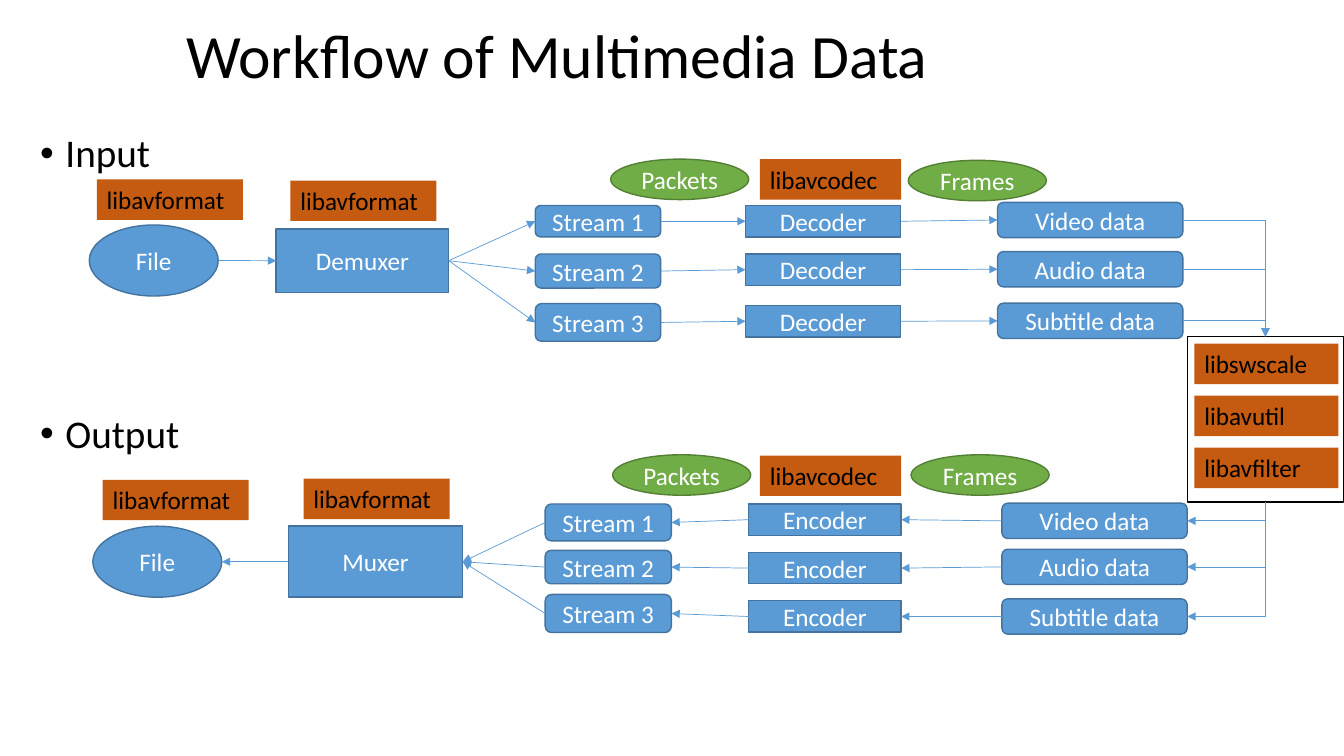
from lxml.etree import SubElement
from pptx import Presentation
from pptx.dml.color import RGBColor
from pptx.enum.shapes import MSO_CONNECTOR, MSO_SHAPE
from pptx.enum.text import MSO_ANCHOR, MSO_AUTO_SIZE, PP_ALIGN
from pptx.oxml.ns import qn
from pptx.util import Cm, Pt

BLUE, BLUE_EDGE = "5B9BD5", "43739E"
GREEN, GREEN_EDGE = "70AD47", "538035"
ORANGE, BLACK, WHITE = "C55A11", "000000", "FFFFFF"
TOP, LEFT, BOTTOM, RIGHT = range(4)
STREAMS = ["Stream 1", "Stream 2", "Stream 3"]
DATA = ["Video data", "Audio data", "Subtitle data"]


def colour(hex_code):
    return RGBColor.from_string(hex_code)


def style(paragraph, size, hex_code, align):
    paragraph.font.name = "Calibri"
    paragraph.font.size = Pt(size)
    paragraph.font.color.rgb = colour(hex_code)
    paragraph.alignment = align


def place(shape, left, top, width, height):
    shape.left, shape.top = Cm(left), Cm(top)
    shape.width, shape.height = Cm(width), Cm(height)


def write_title(slide, text):
    title = slide.shapes.title
    place(title, 1.9, 0.25, 29.21, 2.44)
    frame = title.text_frame
    frame.text = text
    frame.margin_left = Cm(2.79)
    frame.vertical_anchor = MSO_ANCHOR.MIDDLE
    frame.auto_size = MSO_AUTO_SIZE.NONE
    style(frame.paragraphs[0], 44, BLACK, PP_ALIGN.LEFT)
    frame.paragraphs[0].line_spacing = 0.9


def write_sections(slide, sections):
    body = slide.placeholders[1]
    place(body, 0.76, 3.25, 33.1, 15.19)
    frame = body.text_frame
    frame.text = "\n".join(text for text, gap in sections)
    frame.auto_size = MSO_AUTO_SIZE.NONE
    for paragraph, (text, gap) in zip(frame.paragraphs, sections):
        style(paragraph, 28, BLACK, PP_ALIGN.LEFT)
        paragraph.line_spacing = 0.9
        paragraph.space_before = Pt(gap)
        properties = paragraph._p.get_or_add_pPr()
        properties.set("marL", str(Cm(0.635)))
        properties.set("indent", str(-Cm(0.635)))
        SubElement(properties, qn("a:buChar"), char="•")


def add_block(slide, kind, box, text="", fill=BLUE, edge=BLUE_EDGE):
    block = slide.shapes.add_shape(kind, *map(Cm, box))
    block.shadow.inherit = False
    if fill:
        block.fill.solid()
        block.fill.fore_color.rgb = colour(fill)
    else:
        block.fill.background()
    if edge:
        block.line.color.rgb = colour(edge)
        block.line.width = Pt(1)
    else:
        block.line.fill.background()
    if text:
        block.text_frame.text = text
        block.text_frame.vertical_anchor = MSO_ANCHOR.MIDDLE
        style(block.text_frame.paragraphs[0], 18, WHITE, PP_ALIGN.CENTER)
    return block


def add_library(slide, text, left, top, width):
    label = add_block(slide, MSO_SHAPE.RECTANGLE, (left, top, width, 1.02),
                      text, ORANGE, None)
    label.text_frame.vertical_anchor = MSO_ANCHOR.TOP
    style(label.text_frame.paragraphs[0], 18, BLACK, PP_ALIGN.LEFT)


def add_stack(slide, kind, texts, left, width, tops, heights):
    return [add_block(slide, kind, (left, top, width, height), text)
            for text, top, height in zip(texts, tops, heights)]


def side(shape, site):
    across = {LEFT: 0, RIGHT: shape.width}.get(site, shape.width // 2)
    down = {TOP: 0, BOTTOM: shape.height}.get(site, shape.height // 2)
    return shape.left + across, shape.top + down


def add_line(slide, kind, source, source_site, target, target_site, head="tailEnd"):
    line = slide.shapes.add_connector(
        kind, *side(source, source_site), *side(target, target_site))
    line.line.color.rgb = colour(BLUE)
    line.line.width = Pt(0.5)
    SubElement(line.line._get_or_add_ln(), qn("a:" + head), type="triangle")
    SubElement(line._element.spPr, qn("a:effectLst"))
    return line


def add_arrow(slide, source, source_site, target, target_site):
    arrow = add_line(slide, MSO_CONNECTOR.STRAIGHT,
                     source, source_site, target, target_site)
    if source.auto_shape_type != MSO_SHAPE.OVAL:
        arrow.begin_connect(source, source_site)
    if target.auto_shape_type != MSO_SHAPE.OVAL:
        arrow.end_connect(target, target_site)


def add_elbow(slide, data, filters, filters_site, head):
    elbow = add_line(slide, MSO_CONNECTOR.ELBOW,
                     data, RIGHT, filters, filters_site, head)
    elbow._element.spPr.find(qn("a:prstGeom")).set("prst", "bentConnector2")


def link(slide, sources, targets, forward):
    for source, target in zip(sources, targets):
        if forward:
            add_arrow(slide, source, RIGHT, target, LEFT)
        else:
            add_arrow(slide, target, LEFT, source, RIGHT)


def add_flow(slide, file_box, container, container_box, streams, coder, coders, data, forward):
    file = add_block(slide, MSO_SHAPE.OVAL, file_box, "File")
    muxer = add_block(slide, MSO_SHAPE.RECTANGLE, container_box, container)
    stream_boxes = add_stack(slide, MSO_SHAPE.ROUNDED_RECTANGLE, STREAMS, *streams)
    coder_boxes = add_stack(slide, MSO_SHAPE.RECTANGLE, [coder] * 3, *coders, [0.79] * 3)
    data_boxes = add_stack(slide, MSO_SHAPE.ROUNDED_RECTANGLE, DATA, *data, [0.89] * 3)
    stages = [[muxer] * 3, stream_boxes, coder_boxes, data_boxes]
    link(slide, [file], [muxer], forward)
    for sources, targets in zip(stages, stages[1:]):
        link(slide, sources, targets, forward)
    return data_boxes


def main():
    presentation = Presentation()
    presentation.slide_width, presentation.slide_height = Cm(33.87), Cm(19.05)
    slide = presentation.slides.add_slide(presentation.slide_layouts[1])
    write_title(slide, "Workflow of Multimedia Data")
    write_sections(slide, [("Input", 10), ("Output", 170)])

    decoded = add_flow(
        slide, (2.25, 5.67, 3.25, 1.79), "Demuxer", (6.96, 5.77, 4.35, 1.6),
        (13.49, 3.16, (5.18, 6.4, 7.65), (0.79, 0.86, 0.95)),
        "Decoder", (18.79, 3.91, (5.18, 6.4, 7.7)),
        (25.14, 4.67, (5.1, 6.34, 7.64)), True)
    encoded = add_flow(
        slide, (2.34, 13.26, 3.25, 1.79), "Muxer", (7.27, 13.26, 4.39, 1.79),
        (13.74, 3.18, (12.7, 13.87, 14.98), (0.93, 0.84, 0.96)),
        "Encoder", (18.87, 3.84, (12.7, 13.92, 15.14)),
        (25.25, 4.67, (12.68, 13.84, 15.09)), False)

    for left, top in [(2.44, 4.52), (7.32, 4.55), (2.59, 12.09), (7.65, 12.06)]:
        add_library(slide, "libavformat", left, top, 3.68)
    for top in (4.01, 11.48):
        add_library(slide, "libavcodec", 19.15, top, 3.56)
    for row, library in enumerate(["libswscale", "libavutil", "libavfilter"]):
        add_library(slide, library, 30.1, 8.66 + 1.31 * row, 3.63)

    filters = add_block(slide, MSO_SHAPE.RECTANGLE, (29.92, 8.48, 3.94, 4.17),
                        fill=None, edge=BLACK)
    for data in decoded:
        add_elbow(slide, data, filters, TOP, "tailEnd")
    for data in encoded:
        add_elbow(slide, data, filters, BOTTOM, "headEnd")

    for text, left, top in [("Packets", 15.39, 4.01), ("Frames", 22.89, 4.04),
                            ("Packets", 15.44, 11.46), ("Frames", 22.96, 11.46)]:
        add_block(slide, MSO_SHAPE.OVAL, (left, top, 3.48, 1.02), text, GREEN, GREEN_EDGE)
    presentation.save("out.pptx")


if __name__ == "__main__":
    main()
